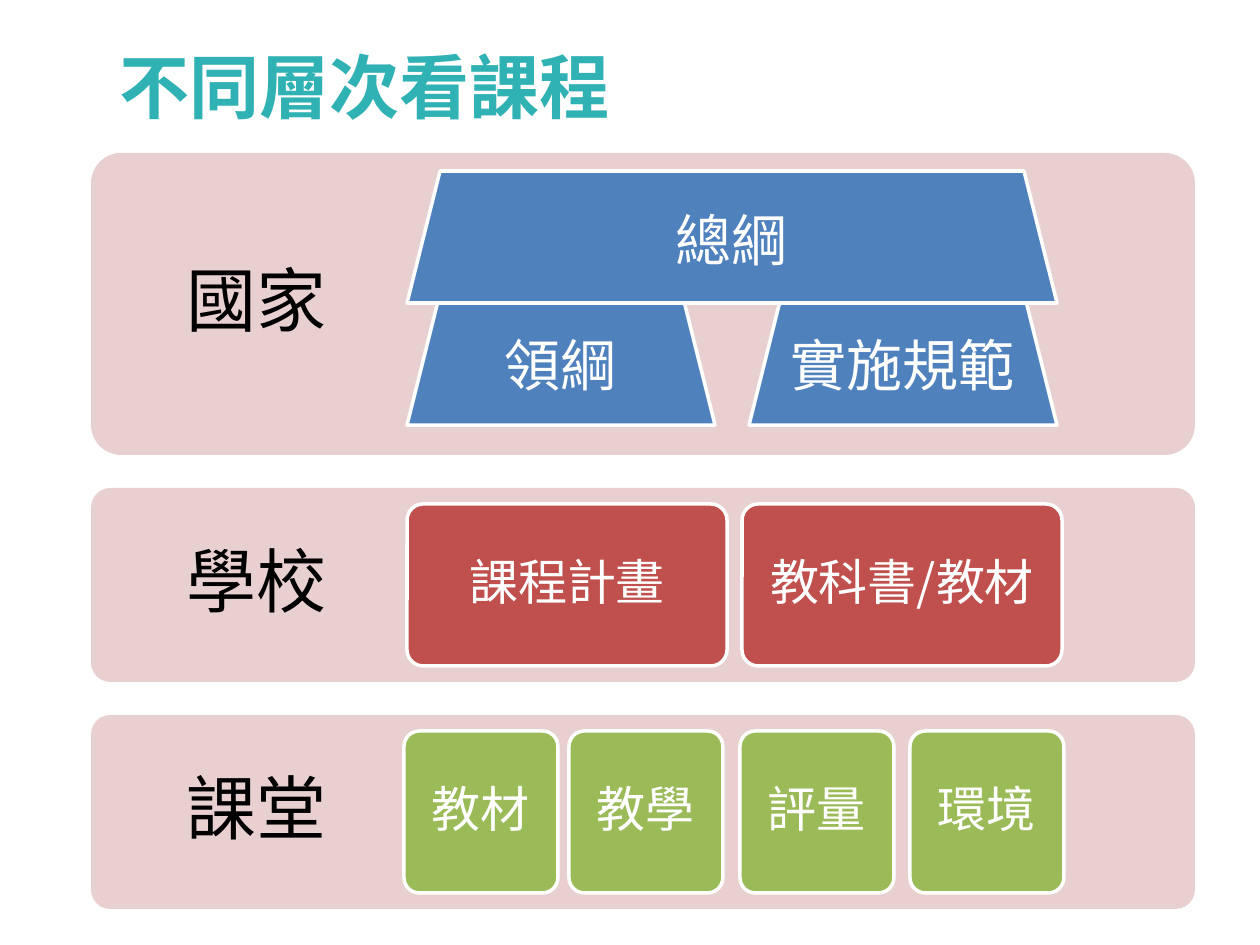
from pptx import Presentation
from pptx.dml.color import RGBColor
from pptx.enum.shapes import MSO_SHAPE as Shape
from pptx.enum.text import MSO_ANCHOR as Anchor, PP_ALIGN as Align
from pptx.oxml.ns import qn
from pptx.util import Pt
from lxml.etree import SubElement

TITLE = "不同層次看課程"

# label, band height, shape kind, fill, text size, rows of (offset from band top, height, boxes)
# A box is (text, left, width); rows run from back to front.
LEVELS = [
    ("國家", 302, "trapezoid", "blue", "large", [
        (140, 132, [("領綱", 407, 308), ("實施規範", 749, 308)]),
        (18, 132, [("總綱", 407, 650)]),
    ]),
    ("學校", 194, "rounded", "red", "body", [
        (16, 162, [("課程計畫", 407, 320), ("教科書/教材", 742, 320)]),
    ]),
    ("課堂", 194, "rounded", "green", "body", [
        (16, 162, [("教材", 404, 154), ("教學", 569, 154),
                   ("評量", 740, 154), ("環境", 910, 154)]),
    ]),
]

THEME = {
    "font": "Noto Sans CJK SC",
    "title": "30B1B3", "band": "E8D0D0", "black": "000000", "white": "FFFFFF",
    "blue": "4F81BD", "red": "C0504D", "green": "9BBB59",
    "size": {"heading": 40, "large": 32, "body": 28},
}
KINDS = {"trapezoid": Shape.TRAPEZOID, "rounded": Shape.ROUNDED_RECTANGLE}
SLIDE_W, SLIDE_H = 1260, 945
BAND_LEFT, BAND_TOP, BAND_W, BAND_GAP = 91, 153, 1104, 33
LABEL_W = 331


def px(n):
    return round(n * 914400 / 126)


def color(name):
    return RGBColor.from_string(THEME[name])


def put_text(sp, text, size, ink, inset, align=Align.CENTER,
             anchor=Anchor.MIDDLE, spacing=0.9, bold=False):
    tf = sp.text_frame
    frame = {"word_wrap": True, "vertical_anchor": anchor,
             "margin_left": px(inset), "margin_right": px(inset),
             "margin_top": px(inset), "margin_bottom": px(inset)}
    for key, value in frame.items():
        setattr(tf, key, value)
    p = tf.paragraphs[0]
    p.alignment, p.line_spacing = align, spacing
    r = p.add_run()
    r.text = text
    font = {"size": Pt(THEME["size"][size]), "bold": bold, "name": THEME["font"]}
    for key, value in font.items():
        setattr(r.font, key, value)
    r.font.color.rgb = color(ink)
    SubElement(r.font._element, qn("a:ea"), typeface=THEME["font"])


def add_box(s, kind, fill, left, top, width, height, outlined=True):
    sp = s.shapes.add_shape(KINDS[kind], px(left), px(top), px(width), px(height))
    sp.shadow.inherit = False
    sp.fill.solid()
    sp.fill.fore_color.rgb = color(fill)
    if kind == "rounded":
        sp.adjustments[0] = 0.1
    if outlined:
        sp.line.color.rgb = color("white")
        sp.line.width = Pt(2)
    else:
        sp.line.fill.background()
    return sp


def add_label(s, text, left, top, width, height, ink, inset, **style):
    sp = s.shapes.add_textbox(px(left), px(top), px(width), px(height))
    put_text(sp, text, "heading", ink, inset, **style)


def add_level(s, top, label, height, kind, fill, size, rows):
    add_box(s, "rounded", "band", BAND_LEFT, top, BAND_W, height, outlined=False)
    add_label(s, label, BAND_LEFT, top, LABEL_W, height, "black", 21)
    spacing = 0.9 if kind == "rounded" else 1.0
    for offset, box_h, boxes in rows:
        for text, left, width in boxes:
            sp = add_box(s, kind, fill, left, top + offset, width, box_h)
            put_text(sp, text, size, "white", 7, spacing=spacing)


def main():
    prs = Presentation()
    prs.slide_width, prs.slide_height = px(SLIDE_W), px(SLIDE_H)
    s = prs.slides.add_slide(prs.slide_layouts[6])
    add_label(s, TITLE, 107, 30, 1134, 118, "title", 7 + 6, align=Align.LEFT,
              anchor=Anchor.TOP, spacing=1.0, bold=True)
    top = BAND_TOP
    for level in LEVELS:
        add_level(s, top, *level)
        top += level[1] + BAND_GAP
    prs.save("out.pptx")


if __name__ == "__main__":
    main()
